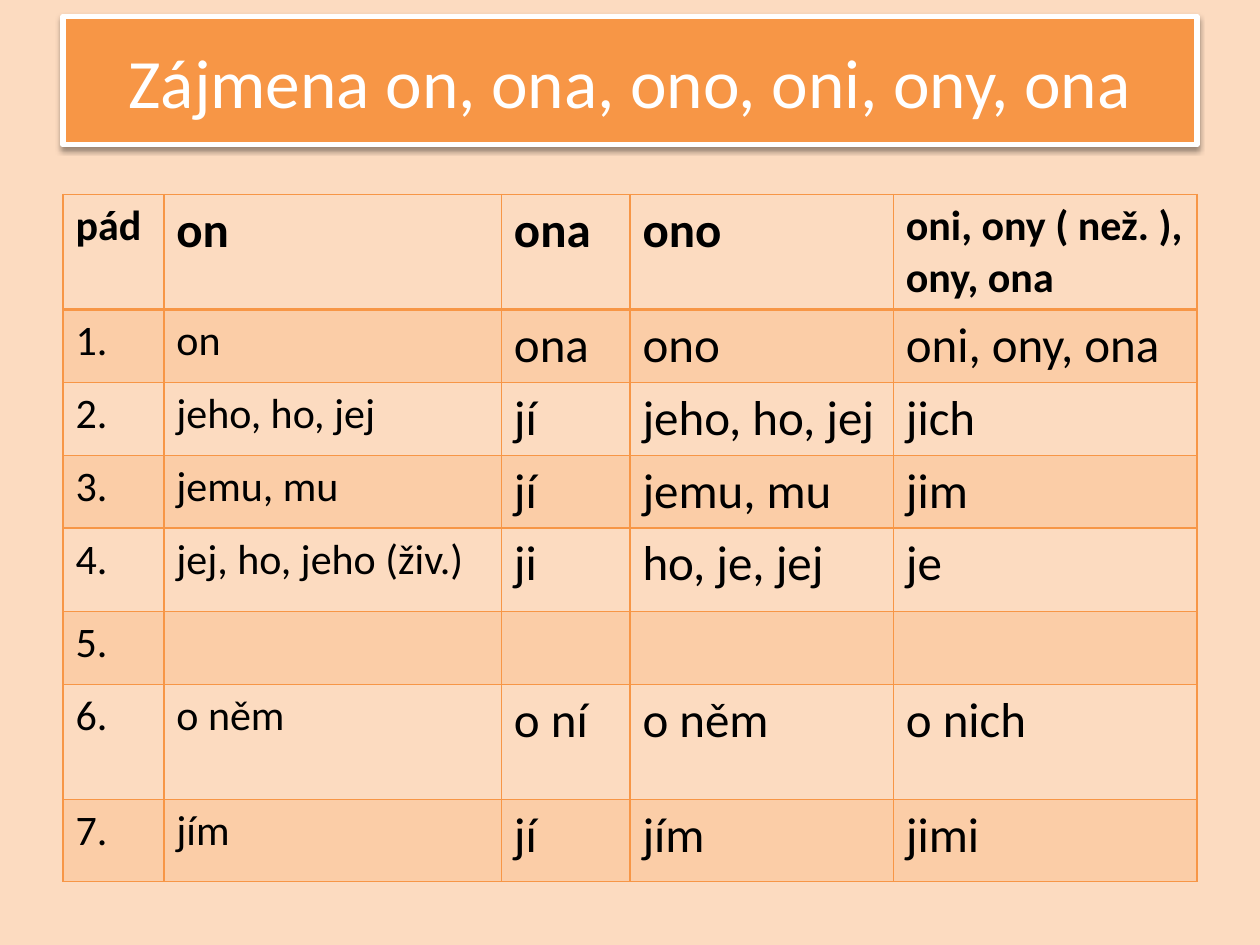
import pptx
import pptx.util
import pptx.dml.color
import pptx.enum.shapes
import pptx.enum.text
import pptx.oxml
import pptx.oxml.ns
from dataclasses import dataclass

Pt = pptx.util.Pt
NAMESPACE = pptx.oxml.ns.nsdecls("a")


@dataclass(frozen=True)
class Theme:
    font: str = "Calibri"
    background: str = "FCDBC0"
    accent: str = "F79646"
    white: str = "FFFFFF"
    black: str = "000000"
    title_size: float = 39.6
    large_size: float = 28
    small_size: float = 24


theme = Theme()


def color(value):
    return pptx.dml.color.RGBColor.from_string(value)


def style_text(frame, size, value, bold=False):
    for para in frame.paragraphs:
        for span in para.runs:
            span.font.name = theme.font
            span.font.size = Pt(size)
            span.font.bold = bold
            span.font.color.rgb = color(value)


deck = pptx.Presentation()
deck.slide_width = Pt(720)
deck.slide_height = Pt(540)
page = deck.slides.add_slide(deck.slide_layouts[6])
page.background.fill.solid()
page.background.fill.fore_color.rgb = color(theme.background)

title = page.shapes.add_shape(
    pptx.enum.shapes.MSO_SHAPE.RECTANGLE, Pt(36), Pt(9.36), Pt(648), Pt(73.44))
title.fill.solid()
title.fill.fore_color.rgb = color(theme.accent)
title.line.color.rgb = color(theme.white)
title.line.width = Pt(3)
title.shadow.inherit = False
title.text_frame.word_wrap = True
title.text_frame.vertical_anchor = pptx.enum.text.MSO_ANCHOR.MIDDLE
title.text_frame.text = "Zájmena on, ona, ono, oni, ony, ona"
title.text_frame.paragraphs[0].alignment = pptx.enum.text.PP_ALIGN.CENTER
style_text(title.text_frame, theme.title_size, theme.white)
effects = title._element.spPr.find(pptx.oxml.ns.qn("a:effectLst"))
effects.append(pptx.oxml.parse_xml(
    f'<a:outerShdw {NAMESPACE} blurRad="{Pt(3.1)}" dist="{Pt(1.6)}" dir="5400000" rotWithShape="0">'
    f'<a:srgbClr val="{theme.black}"><a:alpha val="38000"/></a:srgbClr></a:outerShdw>'))

rows = [
    ["pád", "on", "ona", "ono", "oni, ony ( než. ), ony, ona"],
    ["1.", "on", "ona", "ono", "oni, ony, ona"],
    ["2.", "jeho, ho, jej", "jí", "jeho, ho, jej", "jich"],
    ["3.", "jemu, mu", "jí", "jemu, mu", "jim"],
    ["4.", "jej, ho, jeho (živ.)", "ji", "ho, je, jej", "je"],
    ["5.", "", "", "", ""],
    ["6.", "o něm", "o ní", "o něm", "o nich"],
    ["7.", "jím", "jí", "jím", "jimi"],
]
column_widths = [57.6, 192.9, 73.5, 150.5, 173.5]
row_heights = [65.7, 41.6, 41.6, 41.6, 47.8, 41.6, 65.7, 46.8]

table = page.shapes.add_table(
    len(rows), len(column_widths), Pt(36), Pt(111.2),
    Pt(sum(column_widths)), Pt(sum(row_heights))).table
table.horz_banding = False
for column, width in zip(table.columns, column_widths):
    column.width = Pt(width)
for row, height in zip(table.rows, row_heights):
    row.height = Pt(height)

for row_index, words in enumerate(rows):
    header = row_index == 0
    small_cells = {(0, 0), (0, 4)} if header else {(row_index, 0), (row_index, 1)}
    edge_widths = {"lnL": 1, "lnR": 1,
                   "lnT": 2 if row_index == 1 else 1,
                   "lnB": 2 if header else 1}
    for column_index, word in enumerate(words):
        cell = table.cell(row_index, column_index)
        cell.text_frame.text = word
        small = (row_index, column_index) in small_cells
        style_text(cell.text_frame, theme.small_size if small else theme.large_size,
                   theme.black, header)
        properties = cell._tc.get_or_add_tcPr()
        if row_index % 2:
            cell.fill.solid()
            cell.fill.fore_color.rgb = color(theme.accent)
            tint = properties.find(".//" + pptx.oxml.ns.qn("a:srgbClr"))
            tint.append(pptx.oxml.parse_xml(f'<a:alpha {NAMESPACE} val="20000"/>'))
        else:
            cell.fill.background()
        for position, (edge, width) in enumerate(edge_widths.items()):
            properties.insert(position, pptx.oxml.parse_xml(
                f'<a:{edge} {NAMESPACE} w="{Pt(width)}"><a:solidFill>'
                f'<a:srgbClr val="{theme.accent}"/></a:solidFill></a:{edge}>'))

deck.save("out.pptx")
